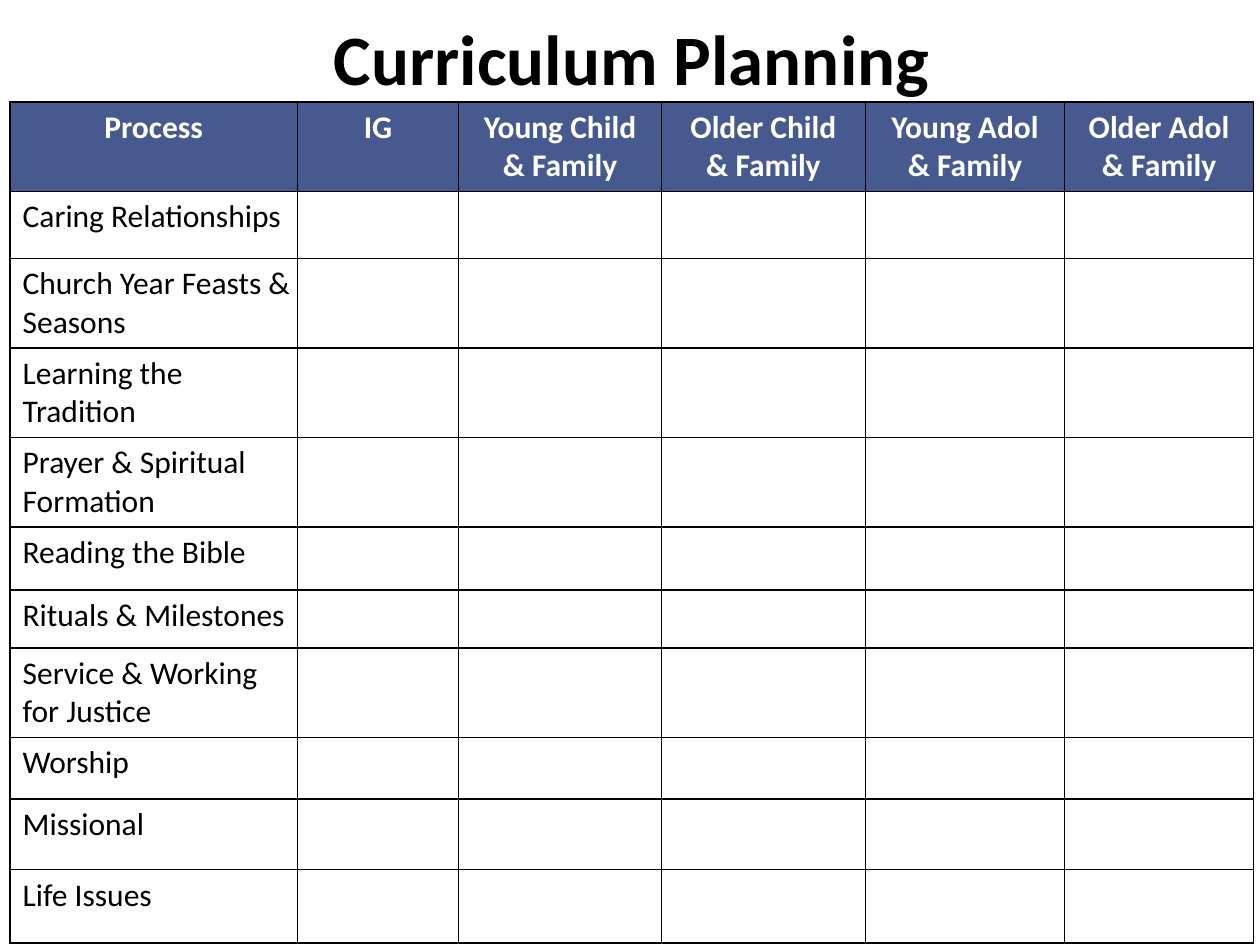
from lxml import etree
from pptx import Presentation
from pptx import util as u
from pptx.dml.color import RGBColor
from pptx.enum import text
from pptx.oxml import ns

BLACK = RGBColor(0, 0, 0)
WHITE = RGBColor(255, 255, 255)
BLUE = RGBColor(0x46, 0x5A, 0x8F)

HEADS = ["Process", "IG", "Young Child\n& Family", "Older Child\n& Family",
         "Young Adol\n& Family", "Older Adol\n& Family"]
TOPICS = ["Caring Relationships", "Church Year Feasts & Seasons",
          "Learning the Tradition", "Prayer & Spiritual Formation",
          "Reading the Bible", "Rituals & Milestones",
          "Service & Working for Justice", "Worship", "Missional", "Life Issues"]
COLS = [2.28, 1.28, 1.61, 1.62, 1.58, 1.5]
TWO = 0.71  # height of a row with two lines of text
ROWS = [TWO, 0.53, TWO, TWO, TWO, 0.5, 0.46, TWO, 0.49, 0.56, 0.58]


def write(frame, words, align, **form):
    frame.text = words
    for para in frame.paragraphs:
        para.alignment = align
        for run in para.runs:
            run.font.color.rgb = form["color"]
            for key in ("name", "size", "bold"):
                setattr(run.font, key, form[key])


def edge(cell):
    props = cell._tc.get_or_add_tcPr()
    for i, side in enumerate(("lnL", "lnR", "lnT", "lnB")):
        line = etree.Element(ns.qn("a:" + side), w=str(u.Pt(1)))
        fill = etree.SubElement(line, ns.qn("a:solidFill"))
        etree.SubElement(fill, ns.qn("a:srgbClr"), val=str(BLACK))
        props.insert(i, line)


# Slide
deck = Presentation()
deck.slide_width, deck.slide_height = u.Inches(10), u.Inches(7.5)
slide = deck.slides.add_slide(deck.slide_layouts[5])

# Planning table
grid = slide.shapes.add_table(
    len(ROWS), len(COLS), u.Inches(0.08), u.Inches(0.81),
    u.Inches(sum(COLS)), u.Inches(sum(ROWS))).table
for col, wide in zip(grid.columns, COLS):
    col.width = u.Inches(wide)
for row, high in zip(grid.rows, ROWS):
    row.height = u.Inches(high)

HEAD = dict(name="Calibri", size=u.Pt(18), bold=True, color=WHITE)
BODY = dict(HEAD, bold=False, color=BLACK)
for cell in grid.iter_cells():
    cell.fill.solid()
    cell.fill.fore_color.rgb = WHITE
    edge(cell)
for c, head in enumerate(HEADS):
    cell = grid.cell(0, c)
    cell.fill.fore_color.rgb = BLUE
    write(cell.text_frame, head, text.PP_ALIGN.CENTER, **HEAD)
for r, topic in enumerate(TOPICS, 1):
    cell = grid.cell(r, 0)
    cell.margin_right = u.Inches(0.05)  # keeps the longest label on one line
    write(cell.text_frame, topic, text.PP_ALIGN.LEFT, **BODY)

# Title, in front of the table
title = slide.shapes.title
slide.shapes._spTree.append(title._element)
PLACE = dict(left=0.53, top=0.04, width=8.92, height=0.82)
for key, size in PLACE.items():
    setattr(title, key, u.Inches(size))
frame = title.text_frame
FRAME = dict(margin_left=u.Inches(0.1), margin_right=u.Inches(0.05),
             margin_top=u.Inches(0.05), margin_bottom=u.Inches(0.05),
             word_wrap=True, auto_size=text.MSO_AUTO_SIZE.NONE,
             vertical_anchor=text.MSO_ANCHOR.MIDDLE)
for key, value in FRAME.items():
    setattr(frame, key, value)
write(frame, "Curriculum Planning", text.PP_ALIGN.CENTER,
      **dict(BODY, size=u.Pt(40.5), bold=True))

deck.save("out.pptx")
